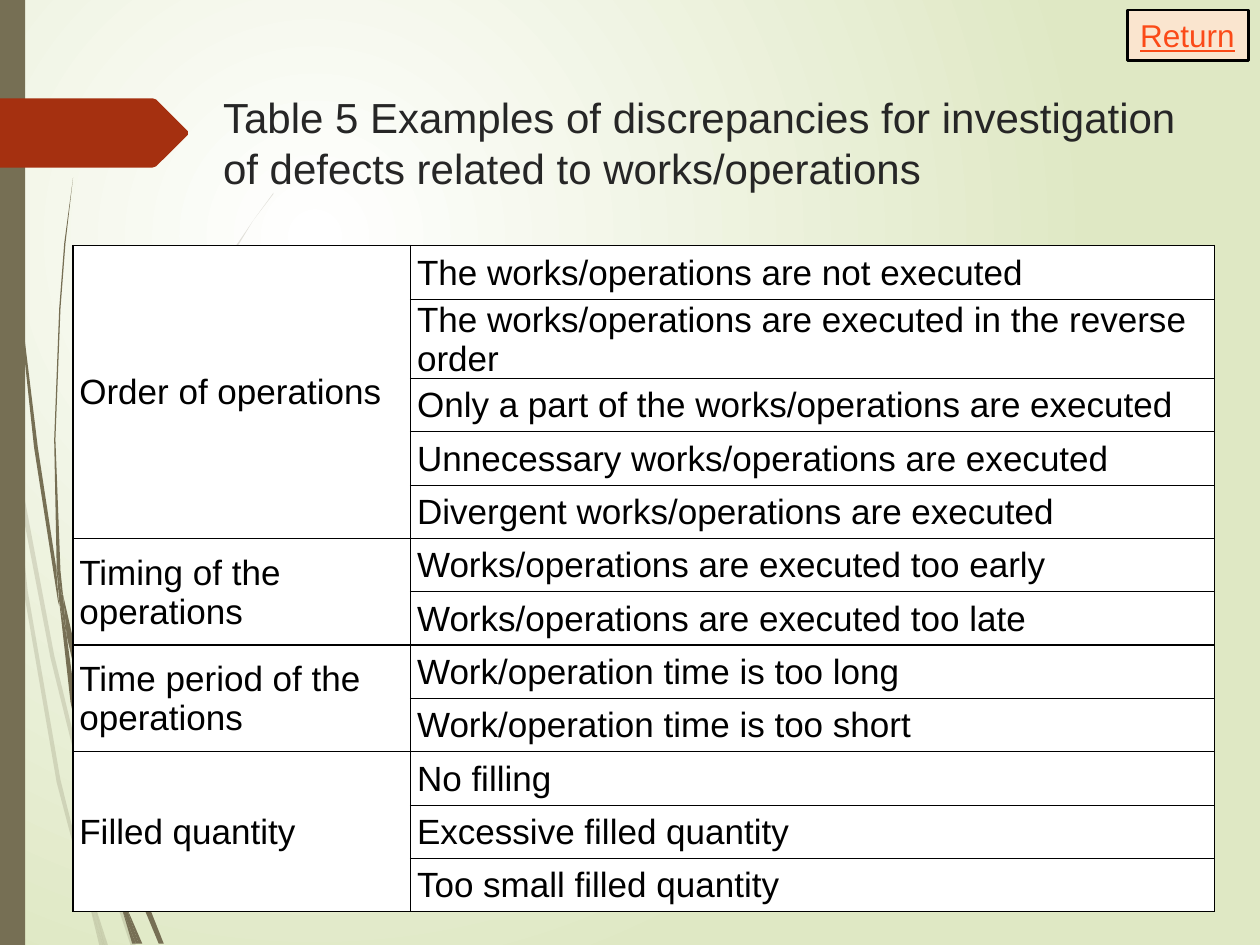
"""Build the slide that lists example discrepancies for works and operations."""
from dataclasses import dataclass

from lxml.etree import SubElement
from pptx import Presentation
from pptx.dml.color import RGBColor
from pptx.enum.shapes import MSO_SHAPE as Preset
from pptx.enum.text import MSO_ANCHOR as Anchor, MSO_AUTO_SIZE as AutoSize, PP_ALIGN as Align
from pptx.oxml.ns import qn
from pptx.slide import Slide
from pptx.table import _Cell as Cell
from pptx.text.text import TextFrame
from pptx.util import Inches, Pt

WHITE = RGBColor(0xFF, 0xFF, 0xFF)
BLACK = RGBColor(0x00, 0x00, 0x00)
MEADOW = RGBColor(0xDF, 0xE8, 0xC4)
OLIVE = RGBColor(0x76, 0x6F, 0x54)
RUST = RGBColor(0xA5, 0x30, 0x10)
CHARCOAL = RGBColor(0x26, 0x26, 0x26)
PEACH = RGBColor(0xFA, 0xE5, 0xCF)
LINK = RGBColor(0xFB, 0x4A, 0x18)

Outline = tuple[tuple[int, int], ...]


@dataclass(frozen=True)
class Category:
    name: str
    examples: tuple[str, ...]


@dataclass(frozen=True)
class Grass:
    blades: tuple[Outline, ...]
    opacity: int


CATEGORIES = (
    Category("Order of operations", (
        "The works/operations are not executed",
        "The works/operations are executed in the reverse order",
        "Only a part of the works/operations are executed",
        "Unnecessary works/operations are executed",
        "Divergent works/operations are executed")),
    Category("Timing of the operations", (
        "Works/operations are executed too early",
        "Works/operations are executed too late")),
    Category("Time period of the operations", (
        "Work/operation time is too long",
        "Work/operation time is too short")),
    Category("Filled quantity", (
        "No filling",
        "Excessive filled quantity",
        "Too small filled quantity")),
)

PALE_GRASS = Grass((
    ((8, 350), (6, 322), (0, 282), (0, 299), (7, 344)),
    ((40, 522), (59, 599), (59, 586), (43, 520), (10, 345), (12, 376)),
    ((64, 607), (61, 596), (61, 610), (85, 694), (104, 751), (108, 751), (88, 692)),
    ((83, 751), (86, 751), (73, 711)),
    ((64, 683), (48, 619), (22, 469), (12, 376), (8, 350), (19, 470), (45, 621),
     (64, 693), (70, 714), (69, 707)),
    ((58, 599), (60, 646), (64, 683), (67, 692), (73, 711), (72, 706), (63, 646),
     (61, 610), (61, 608)),
    ((61, 584), (76, 462), (111, 349), (159, 245), (187, 198), (201, 175), (217, 154),
     (217, 153), (201, 175), (186, 197), (158, 244), (110, 348), (75, 461), (59, 584),
     (59, 586), (61, 596)),
    ((70, 714), (79, 751), (82, 751)),
    ((61, 608), (61, 610), (61, 596), (59, 586), (58, 599)),
    ((67, 692), (65, 683), (69, 707), (70, 714), (82, 751), (83, 751), (73, 711)),
), 20)

DARK_GRASS = Grass((
    ((5, 110), (14, 233), (27, 355), (46, 477), (47, 481), (45, 457), (45, 453), (30, 355),
     (15, 232), (6, 109), (4, 48), (3, 0), (2, 0), (3, 48)),
    ((73, 592), (88, 645), (88, 633), (88, 631), (77, 590), (50, 472), (53, 505)),
    ((94, 649), (91, 641), (91, 656), (109, 708), (126, 749), (130, 749), (113, 706)),
    ((91, 691), (81, 657), (60, 556), (53, 505), (47, 477), (56, 557), (77, 659),
     (92, 708), (97, 722), (96, 717)),
    ((50, 472), (48, 453), (44, 349), (48, 245), (52, 193), (58, 141), (51, 193),
     (47, 245), (43, 349), (45, 449), (49, 472)),
    ((110, 749), (113, 749), (100, 719)),
    ((47, 477), (53, 505), (50, 472), (49, 472), (45, 449), (45, 453)),
    ((91, 633), (103, 552), (131, 476), (169, 406), (191, 374), (203, 359), (216, 344),
     (215, 344), (203, 358), (191, 373), (168, 405), (129, 474), (101, 551), (88, 631),
     (91, 641)),
    ((97, 722), (105, 749), (108, 749)),
    ((88, 645), (91, 691), (96, 706), (100, 719), (100, 716), (91, 656), (90, 651)),
    ((88, 645), (90, 651), (91, 656), (91, 641), (88, 631), (88, 633)),
    ((96, 706), (91, 691), (96, 717), (97, 722), (108, 749), (110, 749), (100, 719)),
), 100)

MARKER = ((149, 107), (124, 132), (121, 133), (0, 133), (0, 78), (121, 78), (124, 79), (149, 104))


def write(frame: TextFrame, text: str, *, size: float, color: RGBColor = BLACK,
          underline: bool = False, indent: float = 0) -> None:
    frame.text = text
    paragraph = frame.paragraphs[0]
    paragraph.alignment = Align.LEFT
    if indent:
        properties = paragraph._p.get_or_add_pPr()
        properties.set("marL", str(Inches(indent)))
        properties.set("indent", "0")
    font = paragraph.runs[0].font
    font.name, font.size, font.color.rgb = "Arial", Pt(size), color
    if underline:
        font.underline = True


def paint_background(slide: Slide) -> None:
    fill = slide.background.fill
    fill.gradient()
    for stop, color in zip(fill.gradient_stops, (WHITE, MEADOW)):
        stop.color.rgb = color
    gradient = slide.element.find(f".//{qn('a:gradFill')}")
    gradient.remove(gradient.find(qn("a:lin")))
    circle = SubElement(gradient, qn("a:path"), path="circle")
    SubElement(circle, qn("a:fillToRect"), l="50000", t="50000", r="100000", b="100000")


def draw_outline(slide: Slide, outline: Outline, color: RGBColor, opacity: int = 100) -> None:
    builder = slide.shapes.build_freeform(*outline[0], scale=Inches(0.01))
    builder.add_line_segments(outline[1:], close=True)
    figure = builder.convert_to_shape()
    figure.shadow.inherit = False
    figure.fill.solid()
    figure.fill.fore_color.rgb = color
    figure.line.fill.background()
    if opacity < 100:
        tint = figure.element.spPr.find(f"{qn('a:solidFill')}/{qn('a:srgbClr')}")
        SubElement(tint, qn("a:alpha"), val=str(opacity * 1000))


def draw_box(slide: Slide, left: float, top: float, width: float, height: float,
             color: RGBColor, border: float = 0) -> TextFrame:
    box = slide.shapes.add_shape(Preset.RECTANGLE, *map(Inches, (left, top, width, height)))
    box.shadow.inherit = False
    box.fill.solid()
    box.fill.fore_color.rgb = color
    if border:
        box.line.color.rgb, box.line.width = BLACK, Pt(border)
    else:
        box.line.fill.background()
    return box.text_frame


def fill_cell(cell: Cell, text: str, top: float = 1, bottom: float = 1) -> None:
    properties = cell._tc.get_or_add_tcPr()
    for side, width in (("L", 1), ("R", 1), ("T", top), ("B", bottom)):
        edge = SubElement(properties, qn(f"a:ln{side}"), w=str(Pt(width)))
        SubElement(SubElement(edge, qn("a:solidFill")), qn("a:srgbClr"), val=str(BLACK))
    cell.fill.solid()
    cell.fill.fore_color.rgb = WHITE
    cell.margin_left = cell.margin_right = cell.margin_top = Inches(0.01)
    cell.margin_bottom = 0
    cell.vertical_anchor = Anchor.MIDDLE
    write(cell.text_frame, text, size=20, indent=0.04)


def draw_table(slide: Slide, categories: tuple[Category, ...]) -> None:
    count = sum(len(category.examples) for category in categories)
    table = slide.shapes.add_table(
        count, 2, Inches(0.58), Inches(1.95), Inches(9.06), Inches(5.08)).table
    table.first_row = table.horz_banding = False
    table.columns[0].width, table.columns[1].width = Inches(2.68), Inches(6.38)
    first = 0
    for category in categories:
        last = first + len(category.examples) - 1
        table.cell(first, 0).merge(table.cell(last, 0))
        fill_cell(table.cell(first, 0), category.name)
        for row, example in enumerate(category.examples, first):
            fill_cell(table.cell(row, 1), example,
                      top=1 if row == first else 0.5, bottom=1 if row == last else 0.5)
        first = last + 1


def main() -> None:
    deck = Presentation()
    deck.slide_width, deck.slide_height = Inches(10), Inches(7.5)
    slide = deck.slides.add_slide(deck.slide_layouts[5])
    paint_background(slide)
    for grass in (PALE_GRASS, DARK_GRASS):
        for blade in grass.blades:
            draw_outline(slide, blade, OLIVE, grass.opacity)
    draw_box(slide, 0, 0, 0.2, 7.5, OLIVE)
    draw_outline(slide, MARKER, RUST)

    title = slide.shapes.title
    title.left, title.top, title.width, title.height = map(Inches, (1.67, 0.68, 8.02, 0.96))
    title.text_frame.auto_size = AutoSize.NONE
    title.text_frame.vertical_anchor = Anchor.TOP
    write(title.text_frame, "Table 5 Examples of discrepancies for investigation "
          "of defects related to works/operations", size=24, color=CHARCOAL)

    draw_table(slide, CATEGORIES)
    button = draw_box(slide, 8.95, 0.08, 0.96, 0.4, PEACH, border=1.5)
    button.word_wrap, button.auto_size = False, AutoSize.SHAPE_TO_FIT_TEXT
    button.vertical_anchor = Anchor.TOP
    write(button, "Return", size=18, color=LINK, underline=True)
    deck.save("out.pptx")


if __name__ == "__main__":
    main()
